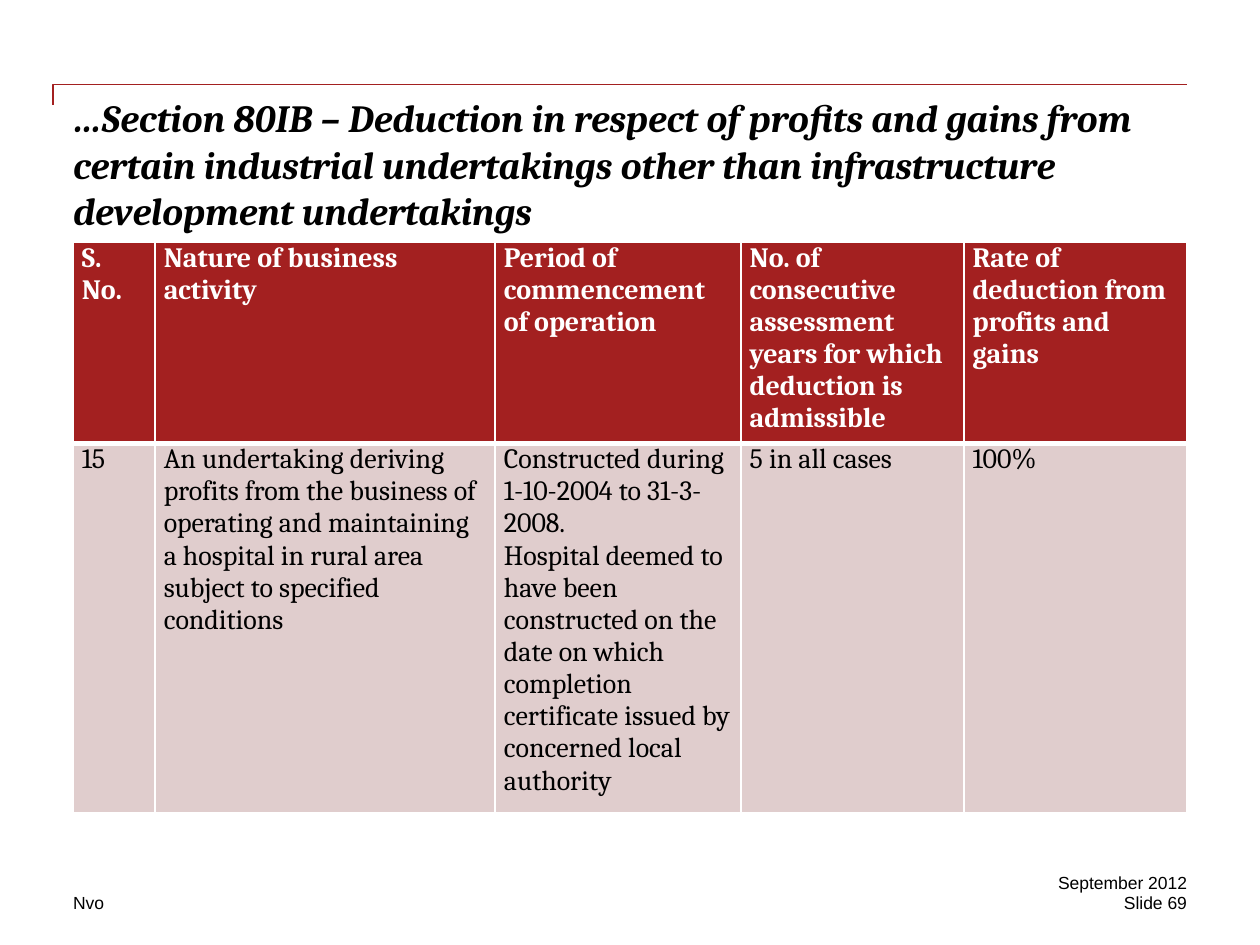
"""Build the Section 80IB deduction slide with its table and footers."""

from dataclasses import dataclass

from lxml.etree import SubElement
from pptx import Presentation
from pptx.dml.color import RGBColor
from pptx.enum.text import PP_ALIGN
from pptx.oxml.ns import qn
from pptx.slide import Slide
from pptx.table import _Cell
from pptx.text.text import _Paragraph
from pptx.util import Inches, Pt


@dataclass(frozen=True)
class TextStyle:
    font: str
    size: int
    color: str
    bold: bool = False
    italic: bool = False


@dataclass(frozen=True)
class Theme:
    red: str = "A32020"
    pink: str = "E0CDCD"
    white: str = "FFFFFF"
    title: TextStyle = TextStyle("Cambria", 22, "000000", True, True)
    header: TextStyle = TextStyle("Cambria", 16, "FFFFFF", True)
    body: TextStyle = TextStyle("Cambria", 16, "000000")
    footer: TextStyle = TextStyle("Arial", 10, "000000")
    thin: float = 1
    thick: float = 3


@dataclass(frozen=True)
class Label:
    text: str
    left: float
    top: float
    width: float
    height: float
    style: TextStyle
    align: PP_ALIGN = PP_ALIGN.LEFT


@dataclass(frozen=True)
class TableRow:
    texts: tuple[str, ...]
    height: float
    style: TextStyle
    fill: str
    top_border: float
    bottom_border: float


THEME = Theme()

LABELS = (
    Label("Nvo", 0.58, 7.08, 2.83, 0.17, THEME.footer),
    Label(
        "…Section 80IB – Deduction in respect of profits and gains from certain "
        "industrial undertakings other than infrastructure development undertakings",
        0.58, 0.75, 8.83, 1, THEME.title,
    ),
    Label("Slide 69", 7.75, 7.08, 1.67, 0.17, THEME.footer, PP_ALIGN.RIGHT),
    Label("September 2012", 7.75, 6.92, 1.67, 0.17, THEME.footer, PP_ALIGN.RIGHT),
)

COLUMN_WIDTHS = (0.65, 2.7, 1.95, 1.77, 1.77)

ROWS = (
    TableRow(
        (
            "S. No.",
            "Nature of business activity",
            "Period of commencement of operation",
            "No. of consecutive assessment years for which deduction is admissible",
            "Rate of deduction from profits and gains",
        ),
        1.53, THEME.header, THEME.red, THEME.thin, THEME.thick,
    ),
    TableRow(
        (
            "15",
            "An undertaking deriving profits from the business of operating and "
            "maintaining a hospital in rural area subject to specified conditions",
            "Constructed during 1-10-2004 to 31-3-2008.\n"
            "Hospital deemed to have been constructed on the date on which "
            "completion certificate issued by concerned local authority",
            "5 in all cases",
            "100%",
        ),
        2.79, THEME.body, THEME.pink, THEME.thick, THEME.thin,
    ),
)


def style_paragraph(paragraph: _Paragraph, style: TextStyle) -> None:
    font = paragraph.font
    font.name = style.font
    font.size = Pt(style.size)
    font.bold = style.bold
    font.italic = style.italic
    font.color.rgb = RGBColor.from_string(style.color)


def add_label(slide: Slide, label: Label) -> None:
    shape = slide.shapes.add_textbox(
        Inches(label.left), Inches(label.top), Inches(label.width), Inches(label.height)
    )
    frame = shape.text_frame
    frame.word_wrap = True
    frame.margin_left = frame.margin_right = frame.margin_top = frame.margin_bottom = 0
    frame.text = label.text
    paragraph = frame.paragraphs[0]
    paragraph.alignment = label.align
    style_paragraph(paragraph, label.style)


def add_title_rule(slide: Slide) -> None:
    builder = slide.shapes.build_freeform(Inches(0.42), Inches(0.83))
    builder.add_line_segments(
        [(Inches(0.42), Inches(0.67)), (Inches(9.42), Inches(0.67))], close=False
    )
    shape = builder.convert_to_shape()
    shape.shadow.inherit = False
    shape.fill.background()
    shape.line.color.rgb = RGBColor.from_string(THEME.red)
    shape.line.width = Pt(1)


def set_borders(cell: _Cell, top: float, bottom: float) -> None:
    properties = cell._tc.get_or_add_tcPr()
    widths = {"a:lnL": THEME.thin, "a:lnR": THEME.thin, "a:lnT": top, "a:lnB": bottom}
    for position, (tag, width) in enumerate(widths.items()):
        line = SubElement(properties, qn(tag), w=str(Pt(width)))
        SubElement(SubElement(line, qn("a:solidFill")), qn("a:srgbClr"), val=THEME.white)
        properties.insert(position, line)


def fill_cell(cell: _Cell, text: str, row: TableRow) -> None:
    cell.text = text
    cell.margin_left = cell.margin_right = Inches(0.07)
    cell.margin_top = cell.margin_bottom = 0
    cell.fill.solid()
    cell.fill.fore_color.rgb = RGBColor.from_string(row.fill)
    for paragraph in cell.text_frame.paragraphs:
        style_paragraph(paragraph, row.style)
    set_borders(cell, row.top_border, row.bottom_border)


def add_deduction_table(slide: Slide) -> None:
    table = slide.shapes.add_table(
        len(ROWS), len(COLUMN_WIDTHS), Inches(0.58), Inches(1.92),
        Inches(sum(COLUMN_WIDTHS)), Inches(sum(row.height for row in ROWS)),
    ).table
    table.horz_banding = False
    for column, width in zip(table.columns, COLUMN_WIDTHS):
        column.width = Inches(width)
    for table_row, row in zip(table.rows, ROWS):
        table_row.height = Inches(row.height)
        for cell, text in zip(table_row.cells, row.texts):
            fill_cell(cell, text, row)


def main() -> None:
    presentation = Presentation()
    presentation.slide_width = Inches(10)
    presentation.slide_height = Inches(7.5)
    slide = presentation.slides.add_slide(presentation.slide_layouts[6])
    add_title_rule(slide)
    for label in LABELS:
        add_label(slide, label)
    add_deduction_table(slide)
    presentation.save("out.pptx")


if __name__ == "__main__":
    main()
